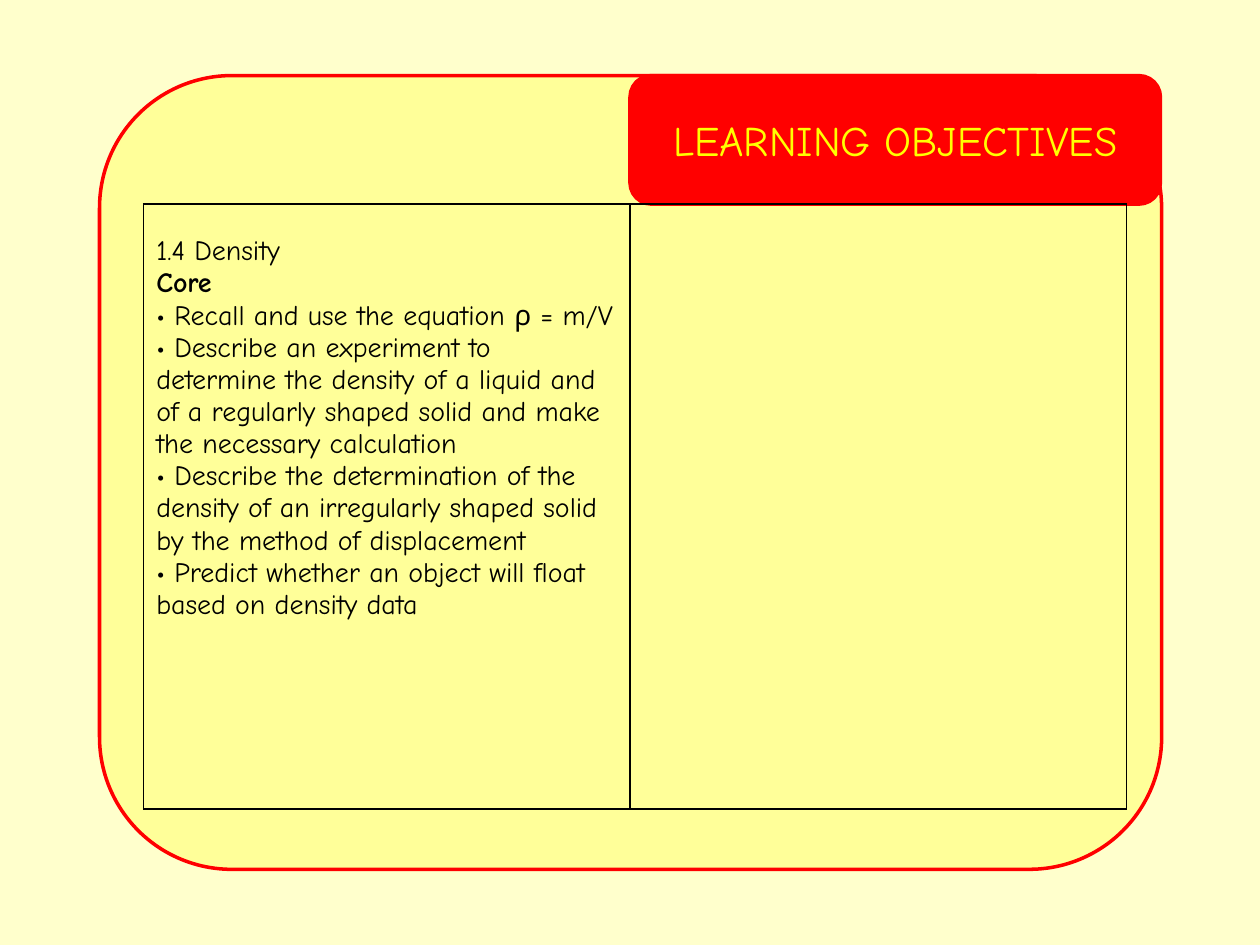
from dataclasses import dataclass

from lxml.etree import SubElement
from pptx import Presentation
from pptx.dml.color import RGBColor
from pptx.enum.shapes import MSO_SHAPE as Shape
from pptx.enum.text import MSO_ANCHOR as Anchor, PP_ALIGN as Align
from pptx.oxml.ns import qn
from pptx.util import Inches, Pt


@dataclass(frozen=True)
class Theme:
    font: str = "Comic Neue"
    page: str = "FFFFCC"
    panel: str = "FFFF99"
    accent: str = "FF0000"
    title: str = "FFFF00"
    ink: str = "000000"
    title_size: int = 24
    body_size: int = 16
    outline: int = 2
    border: int = 1


THEME = Theme()

OBJECTIVES = [
    ("1.4 Density", False),
    ("Core", True),
    ("• Recall and use the equation ρ = m/V", False),
    ("• Describe an experiment to determine the density of a liquid and "
     "of a regularly shaped solid and make the necessary calculation", False),
    ("• Describe the determination of the density of an irregularly shaped "
     "solid by the method of displacement", False),
    ("• Predict whether an object will float based on density data", False),
]


def apply(target, values):
    for name, value in values.items():
        setattr(target, name, value)


def add_panel(page, kind, bounds, fill, line=None):
    panel = page.shapes.add_shape(kind, *map(Inches, bounds))
    panel.shadow.inherit = False
    panel.fill.solid()
    panel.fill.fore_color.rgb = RGBColor.from_string(fill)
    if line:
        panel.line.color.rgb = RGBColor.from_string(line)
        panel.line.width = Pt(THEME.outline)
    else:
        panel.line.fill.background()
    return panel


def write(para, text, size, color, bold=False):
    span = para.add_run()
    span.text = text
    apply(span.font, {"name": THEME.font, "size": Pt(size), "bold": bold})
    span.font.color.rgb = RGBColor.from_string(color)


def add_banner(page, bounds, text):
    banner = add_panel(page, Shape.ROUNDED_RECTANGLE, bounds, THEME.accent, THEME.accent)
    apply(banner.text_frame, {"vertical_anchor": Anchor.MIDDLE, "word_wrap": True})
    para = banner.text_frame.paragraphs[0]
    para.alignment = Align.CENTER
    write(para, text, THEME.title_size, THEME.title)


def outline_cell(cell):
    properties = cell._tc.get_or_add_tcPr()
    for side in ("a:lnL", "a:lnR", "a:lnT", "a:lnB"):
        line = SubElement(properties, qn(side), w=str(Pt(THEME.border)))
        fill = SubElement(line, qn("a:solidFill"))
        SubElement(fill, qn("a:srgbClr"), val=THEME.ink)
    cell.fill.background()


def add_objectives(page, bounds, widths, lines):
    table = page.shapes.add_table(1, len(widths), *map(Inches, bounds)).table
    apply(table, {"first_row": False, "horz_banding": False})
    for column, width in zip(table.columns, widths):
        column.width = Inches(width)
    for cell in table.iter_cells():
        outline_cell(cell)
    cell = table.cell(0, 0)
    cell.margin_top = Inches(0.25)
    for index, (text, bold) in enumerate(lines):
        frame = cell.text_frame
        para = frame.add_paragraph() if index else frame.paragraphs[0]
        write(para, text, THEME.body_size, THEME.ink, bold)


def main():
    deck = Presentation()
    apply(deck, {"slide_width": Inches(10), "slide_height": Inches(7.5)})
    page = deck.slides.add_slide(deck.slide_layouts[6])
    add_panel(page, Shape.RECTANGLE, (0, 0, 10, 7.5), THEME.page)
    add_panel(page, Shape.ROUNDED_RECTANGLE, (0.79, 0.6, 8.43, 6.3), THEME.panel, THEME.accent)
    add_banner(page, (5, 0.6, 4.21, 1.02), "LEARNING OBJECTIVES")
    add_objectives(page, (1.14, 1.62, 7.8, 4.8), (3.86, 3.94), OBJECTIVES)
    deck.save("out.pptx")


if __name__ == "__main__":
    main()
